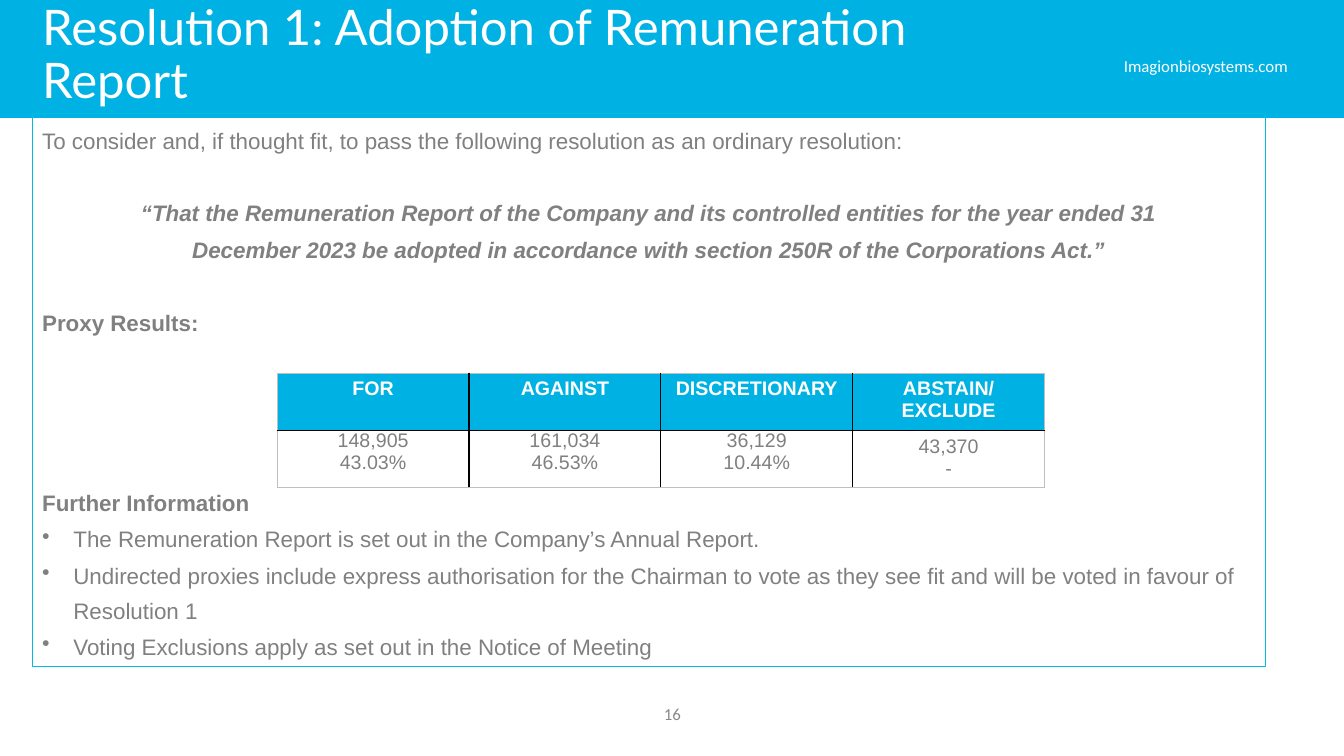
import pptx
import pptx.dml.color
import pptx.enum.shapes
import pptx.enum.text
import pptx.oxml
import pptx.oxml.ns
import pptx.util
from pptx.util import Inches, Pt

ALIGN = pptx.enum.text.PP_ALIGN
ANCHOR = pptx.enum.text.MSO_ANCHOR
RECTANGLE = pptx.enum.shapes.MSO_SHAPE.RECTANGLE
BLUE, GREY, WHITE = "00B2E3", "808080", "FFFFFF"


def color(hex_value):
    return pptx.dml.color.RGBColor.from_string(hex_value)


def style(paragraph, text, size, name, hex_value, align=ALIGN.LEFT, bold=False):
    paragraph.text = text
    paragraph.alignment = align
    paragraph.font.size = Pt(size)
    paragraph.font.name = name
    paragraph.font.bold = bold
    paragraph.font.color.rgb = color(hex_value)


deck = pptx.Presentation()
deck.slide_width, deck.slide_height = Inches(13.33), Inches(7.5)
slide = deck.slides.add_slide(deck.slide_layouts[6])

# Header band
band = slide.shapes.add_shape(RECTANGLE, 0, 0, deck.slide_width, Inches(1.17))
band.shadow.inherit = False
band.fill.solid()
band.fill.fore_color.rgb = color(BLUE)
band.line.fill.background()

# Web address, title and page number
labels = [
    ("Imagionbiosystems.com", (10.92, 0.5, 2.08, 0.34), 12, "Calibri", WHITE, ALIGN.CENTER, ANCHOR.TOP, 1),
    ("Resolution 1: Adoption of Remuneration Report", (0.32, 0.25, 10.04, 0.88),
     35, "Lato", WHITE, ALIGN.LEFT, ANCHOR.BOTTOM, 0.9),
    ("16", (4.42, 6.88, 4.5, 0.4), 12, "Calibri", "888888", ALIGN.CENTER, ANCHOR.MIDDLE, 1),
]
for text, place, size, name, hex_value, align, anchor, spacing in labels:
    label = slide.shapes.add_textbox(*map(Inches, place)).text_frame
    label.word_wrap = True
    label.vertical_anchor = anchor
    style(label.paragraphs[0], text, size, name, hex_value, align)
    label.paragraphs[0].line_spacing = spacing

# Resolution text: wording, kind, space before in points
resolution = [
    ("To consider and, if thought fit, to pass the following resolution as an ordinary resolution:", "plain", 0),
    ("“That the Remuneration Report of the Company and its controlled entities for the year ended 31", "quote", 26),
    ("December 2023 be adopted in accordance with section 250R of the Corporations Act.”", "quote", 0),
    ("Proxy Results:", "heading", 26),
    ("Further Information", "heading", 103),
    ("The Remuneration Report is set out in the Company’s Annual Report.", "bullet", 0),
    ("Undirected proxies include express authorisation for the Chairman to vote as they see fit "
     "and will be voted in favour of Resolution 1", "bullet", 0),
    ("Voting Exclusions apply as set out in the Notice of Meeting", "bullet", 0),
]
body = slide.shapes.add_shape(RECTANGLE, Inches(0.32), Inches(1.13), Inches(12.23), Inches(5.48))
body.shadow.inherit = False
body.fill.background()
body.line.color.rgb = color("00BCE3")
body.line.width = Pt(0.75)
body.text_frame.word_wrap = True
body.text_frame.vertical_anchor = ANCHOR.TOP
for index, (text, kind, gap) in enumerate(resolution):
    paragraph = body.text_frame.paragraphs[0] if index == 0 else body.text_frame.add_paragraph()
    paragraph.line_spacing = 1.3
    paragraph.space_before = Pt(gap)
    paragraph.space_after = Pt(1)
    if kind == "bullet":
        properties = paragraph._p.get_or_add_pPr()
        properties.set("marL", str(Inches(0.31)))
        properties.set("indent", str(-Inches(0.31)))
        bullet = pptx.oxml.parse_xml(f'<a:buChar {pptx.oxml.ns.nsdecls("a")} char="•"/>')
        properties.append(bullet)
    style(paragraph, text, 16, "Arial", GREY,
          ALIGN.CENTER if kind == "quote" else ALIGN.LEFT, kind in ("quote", "heading"))
    paragraph.font.italic = kind == "quote"

# Proxy results table
proxies = [
    ["FOR", "AGAINST", "DISCRETIONARY", "ABSTAIN/ EXCLUDE"],
    ["148,905\n43.03%", "161,034\n46.53%", "36,129\n10.44%", "43,370\n-"],
]
table = slide.shapes.add_table(2, 4, Inches(2.75), Inches(3.7), Inches(7.61), Inches(1.13)).table
for row_number, row in enumerate(proxies):
    for column_number, text in enumerate(row):
        cell = table.cell(row_number, column_number)
        header = row_number == 0
        for line_number, line in enumerate(text.split("\n")):
            paragraph = cell.text_frame.paragraphs[0] if line_number == 0 else cell.text_frame.add_paragraph()
            style(paragraph, line, 14, "Arial", WHITE if header else GREY, ALIGN.CENTER, header)
        if not header and column_number < 3:
            cell.margin_left = cell.margin_right = Inches(0.07)
            cell.margin_top = cell.margin_bottom = 0

        # Black inner borders, thin grey outer ones
        outer = {"L": column_number == 0, "R": column_number == 3, "T": header, "B": not header}
        for side, is_outer in outer.items():
            hex_value, width = ("BFBFBF", 0.5) if is_outer else ("000000", 1)
            cell._tc.get_or_add_tcPr().append(pptx.oxml.parse_xml(
                f'<a:ln{side} {pptx.oxml.ns.nsdecls("a")} w="{Pt(width)}"><a:solidFill>'
                f'<a:srgbClr val="{hex_value}"/></a:solidFill></a:ln{side}>'))
        if header:
            cell.fill.solid()
            cell.fill.fore_color.rgb = color(BLUE)
        else:
            cell.fill.background()

deck.save("out.pptx")
